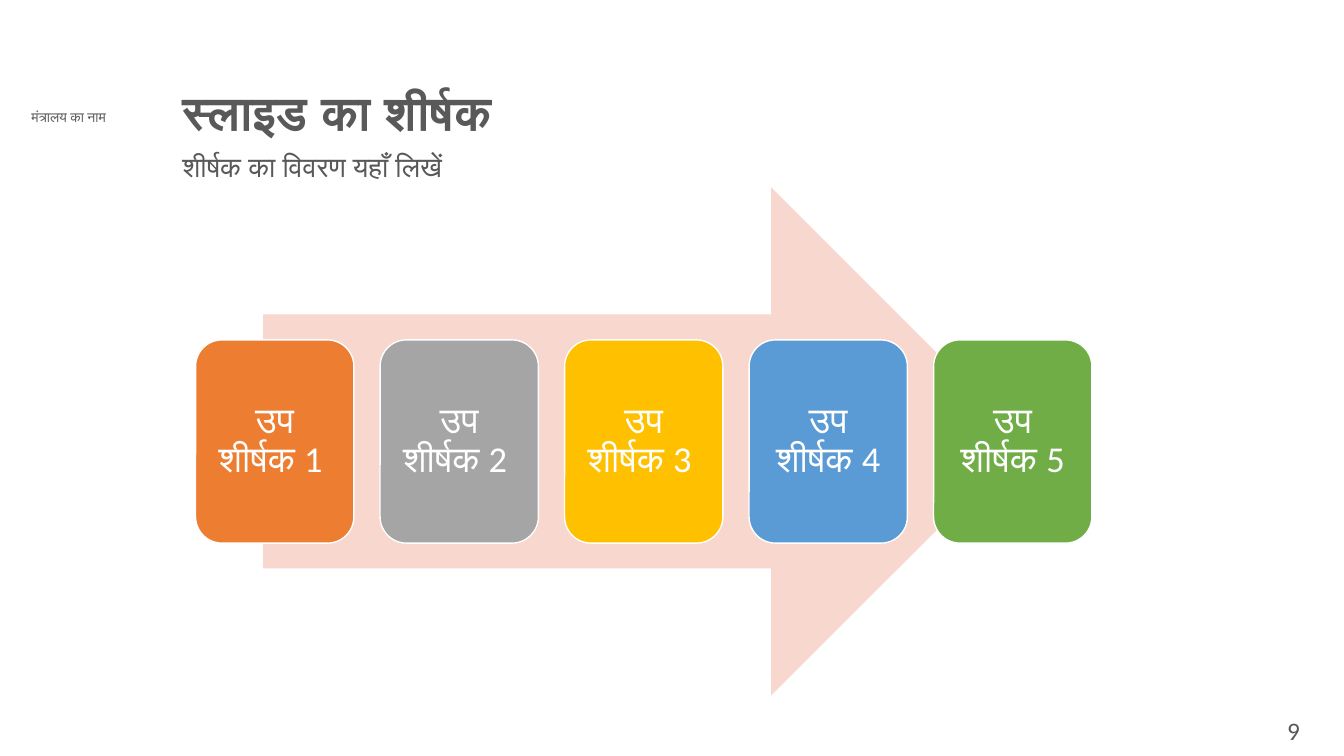
import pptx
import pptx.util
import pptx.dml.color
import pptx.enum.shapes
import pptx.enum.text

WIDTH, HEIGHT = 13.33, 7.5
GREY, WHITE, ARROW_PINK = "595959", "FFFFFF", "F8D7CE"
CENTER = pptx.enum.text.PP_ALIGN.CENTER
LEFT = pptx.enum.text.PP_ALIGN.LEFT

TEXTS = [
    ("मंत्रालय का नाम", (0.03, 1.03, 1.3, 0.27), {"size": 10}, {"alignment": CENTER}),
    ("स्लाइड का शीर्षक", (1.71, 0.84, 9.61, 0.55), {"size": 34, "bold": True},
     {"alignment": LEFT, "line_spacing": 0.9}),
    ("शीर्षक का विवरण यहाँ लिखें", (1.71, 1.47, 9.61, 0.63), {"size": 20},
     {"alignment": LEFT, "line_spacing": 0.9}),
    ("9", (WIDTH - 1, HEIGHT - 0.45, 1, 0.45), {"size": 18}, {"alignment": CENTER}),
]
STEPS = [
    ("उप शीर्षक 1 ", "ED7D31"),
    ("उप शीर्षक 2 ", "A5A5A5"),
    ("उप शीर्षक 3 ", "FFC000"),
    ("उप शीर्षक 4", "5B9BD5"),
    ("उप शीर्षक 5", "70AD47"),
]
ARROW = (2.61, 1.86, 7.56, 5.04)
STEP_LEFT, STEP_PITCH, STEP_WIDTH = 1.94, 1.83, 1.57
STEP_HEIGHT = ARROW[3] * 0.4
STEP_TOP = ARROW[1] + (ARROW[3] - STEP_HEIGHT) / 2


def color(value):
    return pptx.dml.color.RGBColor.from_string(value)


def inches(box):
    return [pptx.util.Inches(length) for length in box]


def set_all(target, values):
    for name, value in values.items():
        setattr(target, name, value)


def write(shape, text, text_color, font, paragraph_format, frame_format):
    set_all(shape.text_frame, {"word_wrap": True, **frame_format})
    paragraph = shape.text_frame.paragraphs[0]
    set_all(paragraph, paragraph_format)
    run = paragraph.add_run()
    run.text = text
    set_all(run.font, {"name": "Calibri", **font, "size": pptx.util.Pt(font["size"])})
    run.font.color.rgb = color(text_color)


def add_filled(slide, kind, box, fill):
    shape = slide.shapes.add_shape(kind, *inches(box))
    shape.shadow.inherit = False
    shape.fill.solid()
    shape.fill.fore_color.rgb = color(fill)
    shape.line.fill.background()
    return shape


def main():
    presentation = pptx.Presentation()
    presentation.slide_width, presentation.slide_height = inches((WIDTH, HEIGHT))
    slide = presentation.slides.add_slide(presentation.slide_layouts[6])

    for text, box, font, paragraph_format in TEXTS:
        write(slide.shapes.add_textbox(*inches(box)), text, GREY, font, paragraph_format, {})

    kinds = pptx.enum.shapes.MSO_SHAPE
    add_filled(slide, kinds.RIGHT_ARROW, ARROW, ARROW_PINK)

    sides = ("margin_left", "margin_top", "margin_right", "margin_bottom")
    step_frame = dict.fromkeys(sides, pptx.util.Inches(0.11))
    step_frame["vertical_anchor"] = pptx.enum.text.MSO_ANCHOR.MIDDLE
    for index, (label, fill) in enumerate(STEPS):
        box = (STEP_LEFT + index * STEP_PITCH, STEP_TOP, STEP_WIDTH, STEP_HEIGHT)
        step = add_filled(slide, kinds.ROUNDED_RECTANGLE, box, fill)
        step.line.color.rgb = color(WHITE)
        step.line.width = pptx.util.Pt(1)
        write(step, label, WHITE, {"size": 26},
              {"alignment": CENTER, "line_spacing": 0.9}, step_frame)

    presentation.save("out.pptx")


if __name__ == "__main__":
    main()
